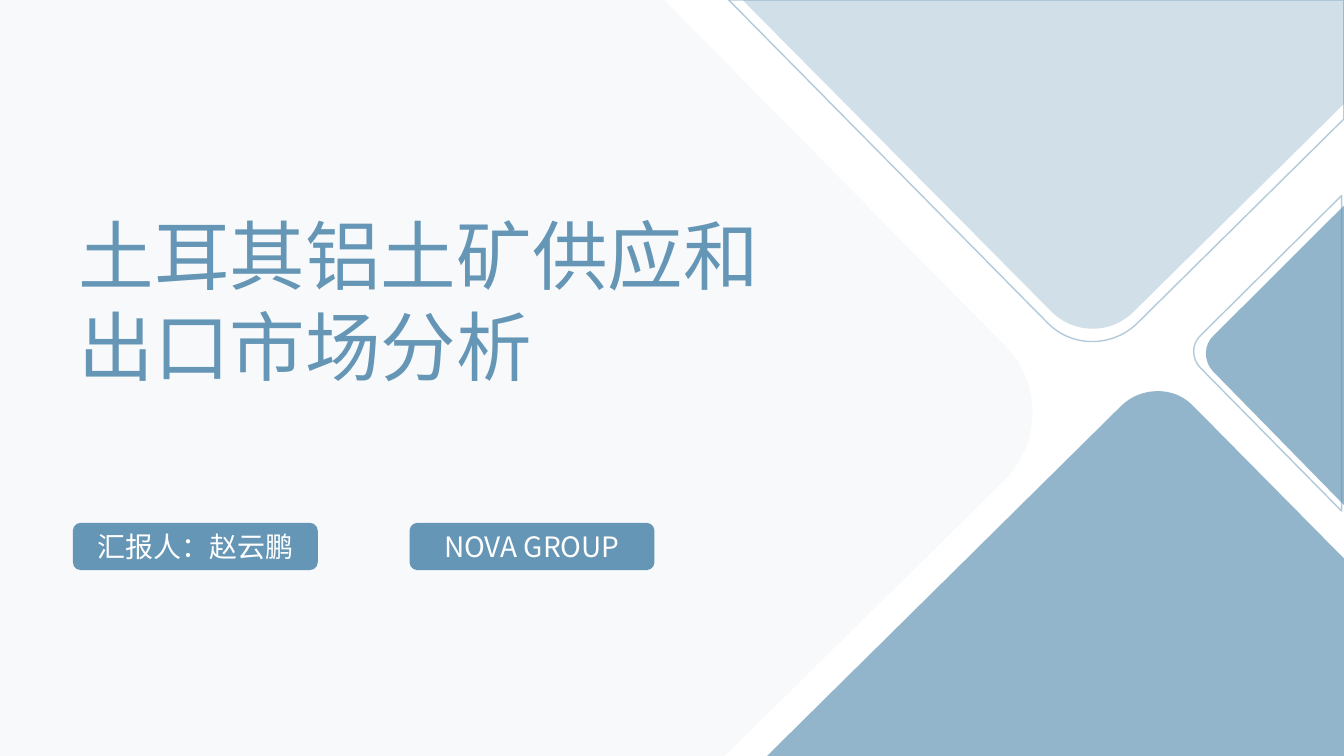
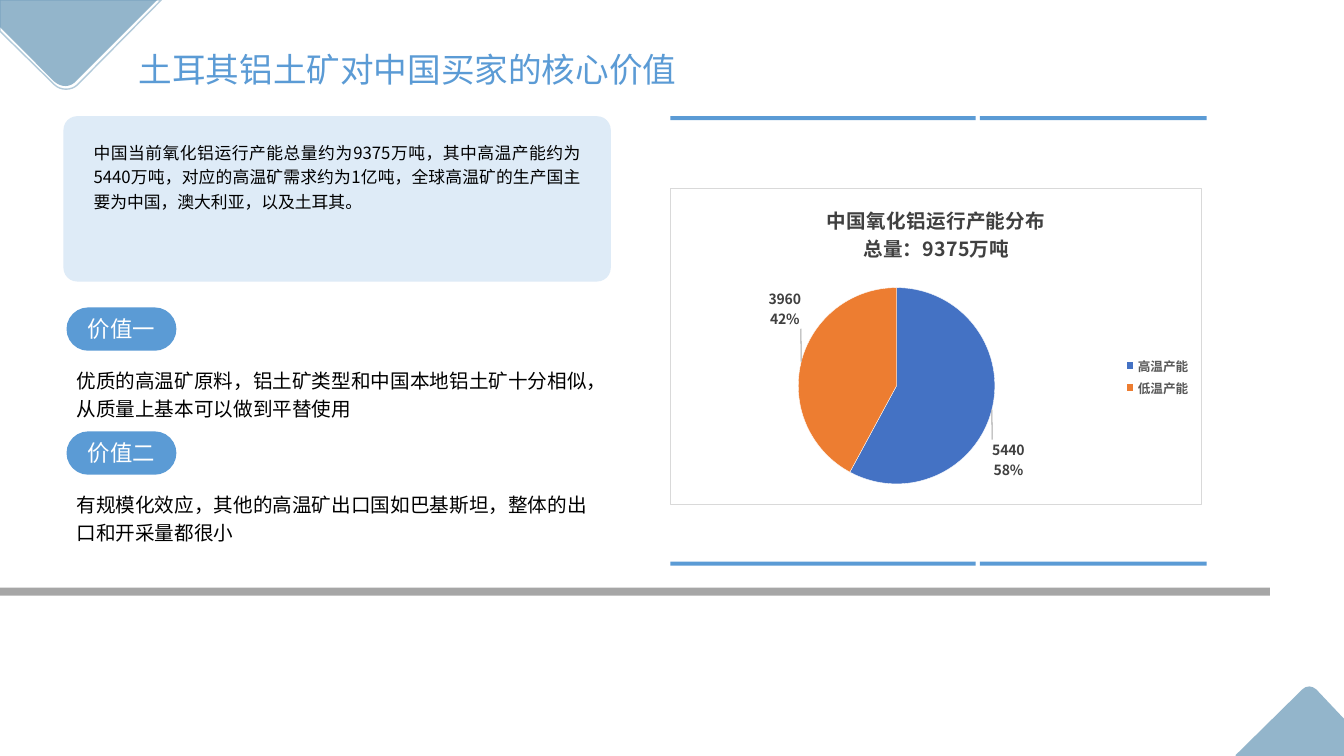
import pptx
import pptx.chart.data
import pptx.dml.color
import pptx.enum.chart
import pptx.enum.shapes
import pptx.enum.text
import pptx.oxml
import pptx.oxml.ns
import pptx.util

RGBColor = pptx.dml.color.RGBColor
STEEL = RGBColor(0x66, 0x96, 0xB6)
SKY = RGBColor(0x5B, 0x9B, 0xD5)
PALE = RGBColor(0xDE, 0xEB, 0xF7)
GREY = RGBColor(0xA6, 0xA6, 0xA6)
DARK = RGBColor(0x40, 0x40, 0x40)
LEGEND_GREY = RGBColor(0x59, 0x59, 0x59)
BLACK = RGBColor(0x00, 0x00, 0x00)
WHITE = RGBColor(0xFF, 0xFF, 0xFF)
SLICES = [RGBColor(0x44, 0x72, 0xC4), RGBColor(0xED, 0x7D, 0x31)]

CJK = "Noto Sans CJK SC"
LATIN = "Arial"
RECTANGLE = pptx.enum.shapes.MSO_SHAPE.RECTANGLE
ROUNDED = pptx.enum.shapes.MSO_SHAPE.ROUNDED_RECTANGLE
LEFT = pptx.enum.text.PP_ALIGN.LEFT
CENTER = pptx.enum.text.PP_ALIGN.CENTER
JUSTIFY = pptx.enum.text.PP_ALIGN.JUSTIFY
qn = pptx.oxml.ns.qn

# The slide is a grid of 40 columns by 22.5 rows of square cells
COLUMNS, ROWS = 40, 22.5
CELL = 304800

presentation = pptx.Presentation()
presentation.slide_width = pptx.util.Emu(COLUMNS * CELL)
presentation.slide_height = pptx.util.Emu(int(ROWS * CELL))
blank_layout = presentation.slide_layouts[6]


def add_diamond(slide, start, segments, opacity, outlined=False):
    """Draw a rounded diamond; a segment is a corner (x, y) or a curve of three points."""
    corners = [(round(x * CELL), round(y * CELL))
               for x, y in [start] + [segment[-2:] for segment in segments]]
    builder = slide.shapes.build_freeform(*corners[0], scale=1.0)
    builder.add_line_segments(corners[1:], close=True)
    shape = builder.convert_to_shape()
    shape.shadow.inherit = False
    # Turn the straight segments with control points into curves
    lines = shape._element.findall(".//" + qn("a:lnTo"))
    for line, segment in zip(lines, segments):
        if len(segment) == 6:
            curve = line.makeelement(qn("a:cubicBezTo"), {})
            for x, y in (segment[:2], segment[2:4]):
                curve.append(curve.makeelement(qn("a:pt"), {
                    "x": str(round(x * CELL) - shape.left),
                    "y": str(round(y * CELL) - shape.top)}))
            curve.append(line[0])
            line.getparent().replace(line, curve)
    if outlined:
        shape.fill.background()
        shape.line.color.rgb = STEEL
        shape.line.width = pptx.util.Pt(1)
    else:
        shape.fill.solid()
        shape.fill.fore_color.rgb = STEEL
        shape.line.fill.background()
    color = shape._element.spPr.find(".//" + qn("a:srgbClr"))
    color.append(color.makeelement(qn("a:alpha"), {"val": str(opacity * 1000)}))


def add_block(slide, box, kind=None, fill=None, corner=None, text=None, size=12,
              color=WHITE, font=CJK, align=CENTER, spacing=None, wrap=True):
    """Add a filled shape, or a text box when no kind is given."""
    box = [round(value * CELL) for value in box]
    if kind is None:
        shape = slide.shapes.add_textbox(*box)
    else:
        shape = slide.shapes.add_shape(kind, *box)
        shape.shadow.inherit = False
        shape.fill.solid()
        shape.fill.fore_color.rgb = fill
        shape.line.fill.background()
    if corner is not None:
        shape.adjustments[0] = corner
    if text is None:
        return
    frame = shape.text_frame
    frame.word_wrap = wrap
    anchor = pptx.enum.text.MSO_ANCHOR
    frame.vertical_anchor = anchor.TOP if spacing else anchor.MIDDLE
    paragraph = frame.paragraphs[0]
    paragraph.alignment = align
    paragraph._p.get_or_add_pPr().set("hangingPunct", "1")
    if spacing:
        paragraph.line_spacing = pptx.util.Pt(spacing)
    run = paragraph.add_run()
    run.text = text
    run.font.size = pptx.util.Pt(size)
    run.font.color.rgb = color
    run.font.name = font
    properties = run._r.get_or_add_rPr()
    properties.append(properties.makeelement(qn("a:ea"), {"typeface": CJK}))


# Slide 1: cover diamonds, from back to front
cover = presentation.slides.add_slide(blank_layout)
add_diamond(cover, (22.1, 0), [(40, 0), (40, 3.09), (33.75, 9.27),
                               (33.06, 9.96, 31.95, 9.96, 31.26, 9.24)], 30)
add_diamond(cover, (21.69, 0), [(40, 0), (40, 3.54), (33.84, 9.63),
                                (33.09, 10.35, 31.89, 10.35, 31.17, 9.6)], 50, True)
add_diamond(cover, (40, 6.12), [(40, 15.03), (36.09, 11.04),
                                (35.82, 10.74, 35.82, 10.26, 36.12, 9.99)], 70)
add_diamond(cover, (39.93, 5.82), [(39.93, 15.21), (35.73, 10.95),
                                   (35.46, 10.68, 35.46, 10.23, 35.73, 9.99)], 50, True)
add_diamond(cover, (0, 0), [(19.77, 0), (29.91, 10.29),
                            (31.02, 11.4, 30.99, 13.17, 29.91, 14.28),
                            (21.57, ROWS), (0, ROWS)], 5)
add_diamond(cover, (34.47, 11.64), [(34.86, 11.64, 35.25, 11.79, 35.55, 12.12),
                                    (40, 16.62), (40, ROWS), (22.83, ROWS),
                                    (22.95, 22.38), (33.36, 12.09),
                                    (33.66, 11.79, 34.05, 11.64, 34.47, 11.64)], 70)

# Cover title and presenter labels
add_block(cover, (2.04, 6.06, 22.08, 5.76), text="土耳其铝土矿供应和出口市场分析",
          size=54, color=STEEL, align=LEFT, spacing=65)
for left, label in ((2.17, "汇报人：赵云鹏"), (12.19, "NOVA GROUP")):
    add_block(cover, (left, 15.56, 7.29, 1.41), ROUNDED, STEEL, text=label, size=20)

# Slide 2: corner diamonds
content = presentation.slides.add_slide(blank_layout)
add_diamond(content, (38.97, 20.43), [(39.03, 20.43, 39.12, 20.46, 39.18, 20.52),
                                      (40, 21.39), (40, ROWS), (36.78, ROWS),
                                      (36.78, 22.47), (38.76, 20.52),
                                      (38.82, 20.46, 38.88, 20.43, 38.97, 20.43)], 70)
add_diamond(content, (4.68, 0), [(0, 0), (0, 0.81), (1.62, 2.43),
                                 (1.83, 2.61, 2.1, 2.61, 2.28, 2.4)], 70)
add_diamond(content, (4.8, 0), [(0, 0), (0, 0.93), (1.62, 2.52),
                                (1.8, 2.7, 2.13, 2.7, 2.31, 2.52)], 50, True)

# Title, grey band and the rules above and below the chart
add_block(content, (3.83, 1.32, 16.77, 1.5), text="土耳其铝土矿对中国买家的核心价值",
          size=24, color=SKY, font=LATIN, align=LEFT, wrap=False)
add_block(content, (0, 17.49, 37.8, 0.24), RECTANGLE, GREY)
for left, width in ((29.16, 6.75), (19.95, 9.09)):
    for top in (3.46, 16.72):
        add_block(content, (left, top, width, 0.12), RECTANGLE, SKY)

# Summary panel
add_block(content, (1.89, 3.46, 16.29, 4.92), ROUNDED, PALE, 0.083)
add_block(content, (2.49, 3.96, 15.09, 2.49),
          text="中国当前氧化铝运行产能总量约为9375万吨，其中高温产能约为5440万吨，"
               "对应的高温矿需求约为1亿吨，全球高温矿的生产国主要为中国，澳大利亚，以及土耳其。",
          size=12, color=BLACK, align=JUSTIFY, spacing=17.5)

# Two value points at an equal pitch
values = [
    ("价值一", "优质的高温矿原料，铝土矿类型和中国本地铝土矿十分相似，从质量上基本可以做到平替使用"),
    ("价值二", "有规模化效应，其他的高温矿出口国如巴基斯坦，整体的出口和开采量都很小"),
]
for index, (label, detail) in enumerate(values):
    top = 9.15 + 3.69 * index
    add_block(content, (1.98, top, 3.27, 1.29), ROUNDED, SKY, 0.5,
              text=label, size=16, font=LATIN)
    add_block(content, (1.98, top + 1.55, 15.99, 1.98), text=detail,
              size=14, color=BLACK, font=LATIN, align=LEFT, spacing=20)

# Capacity pie chart
chart_data = pptx.chart.data.CategoryChartData()
chart_data.categories = ["高温产能", "低温产能"]
chart_data.add_series("Series 1", (5440, 3960))
chart_box = [round(value * CELL) for value in (19.95, 5.6, 15.84, 9.42)]
chart = content.shapes.add_chart(pptx.enum.chart.XL_CHART_TYPE.PIE, *chart_box, chart_data).chart
chart.font.name = CJK
chart.font.size = pptx.util.Pt(10)
chart.font.color.rgb = BLACK

chart.has_title = True
title_frame = chart.chart_title.text_frame
for index, line in enumerate(("中国氧化铝运行产能分布", "总量：9375万吨")):
    paragraph = title_frame.add_paragraph() if index else title_frame.paragraphs[0]
    run = paragraph.add_run()
    run.text = line
    run.font.size = pptx.util.Pt(14)
    run.font.bold = True
    run.font.color.rgb = DARK
    run.font.name = CJK
chart.chart_title.include_in_layout = False

CHART_NAMESPACES = pptx.oxml.ns.nsdecls("c", "a")
chart.has_legend = True
legend = chart.legend
legend.position = pptx.enum.chart.XL_LEGEND_POSITION.RIGHT
legend.include_in_layout = False
legend.font.size = pptx.util.Pt(9)
legend.font.bold = True
legend.font.color.rgb = LEGEND_GREY
legend.font.name = CJK
for old_layout in legend._element.findall(qn("c:layout")):
    legend._element.remove(old_layout)
legend._element.find(qn("c:legendPos")).addnext(pptx.oxml.parse_xml(
    f'<c:layout {CHART_NAMESPACES}><c:manualLayout><c:xMode val="edge"/>'
    '<c:yMode val="edge"/><c:x val="0.85"/><c:y val="0.52"/></c:manualLayout></c:layout>'))

# Slices, with their labels moved away from the pie
plot = chart.plots[0]
plot.vary_by_categories = True
series = plot.series[0]
labels = series.data_labels
labels.show_value = True
labels.show_percentage = True
for index, (fill, shift) in enumerate(zip(SLICES, ((-0.01, 0.09), (0.01, -0.1)))):
    point = series.points[index]
    point.format.fill.solid()
    point.format.fill.fore_color.rgb = fill
    point.format.line.color.rgb = WHITE
    point.format.line.width = pptx.util.Pt(0.25)
    label = point.data_label
    label.position = pptx.enum.chart.XL_LABEL_POSITION.OUTSIDE_END
    label.font.size = pptx.util.Pt(10)
    label.font.bold = True
    label.font.color.rgb = DARK
    label.font.name = CJK
    element = labels._element.findall(qn("c:dLbl"))[index]
    element.find(qn("c:showPercent")).set("val", "1")
    separator = element.makeelement(qn("c:separator"), {})
    separator.text = "\n"
    element.append(separator)
    element.find(qn("c:idx")).addnext(pptx.oxml.parse_xml(
        f'<c:layout {CHART_NAMESPACES}><c:manualLayout>'
        f'<c:x val="{shift[0]}"/><c:y val="{shift[1]}"/></c:manualLayout></c:layout>'))
labels._element.append(pptx.oxml.parse_xml(
    f'<c:leaderLines {CHART_NAMESPACES}><c:spPr><a:ln w="9525"><a:solidFill>'
    '<a:srgbClr val="A6A6A6"/></a:solidFill></a:ln></c:spPr></c:leaderLines>'))

# Place the pie and frame the chart
plot_area = chart._chartSpace.find(".//" + qn("c:plotArea"))
for old_layout in plot_area.findall(qn("c:layout")):
    plot_area.remove(old_layout)
plot_area.insert(0, pptx.oxml.parse_xml(
    f'<c:layout {CHART_NAMESPACES}><c:manualLayout><c:layoutTarget val="inner"/>'
    '<c:xMode val="edge"/><c:yMode val="edge"/><c:x val="0.24"/><c:y val="0.31"/>'
    '<c:w val="0.37"/><c:h val="0.63"/></c:manualLayout></c:layout>'))
chart._chartSpace.find(qn("c:txPr")).addprevious(pptx.oxml.parse_xml(
    f'<c:spPr {CHART_NAMESPACES}><a:solidFill><a:srgbClr val="FFFFFF"/></a:solidFill>'
    '<a:ln w="9525"><a:solidFill><a:srgbClr val="D9D9D9"/></a:solidFill></a:ln></c:spPr>'))

presentation.save("out.pptx")
